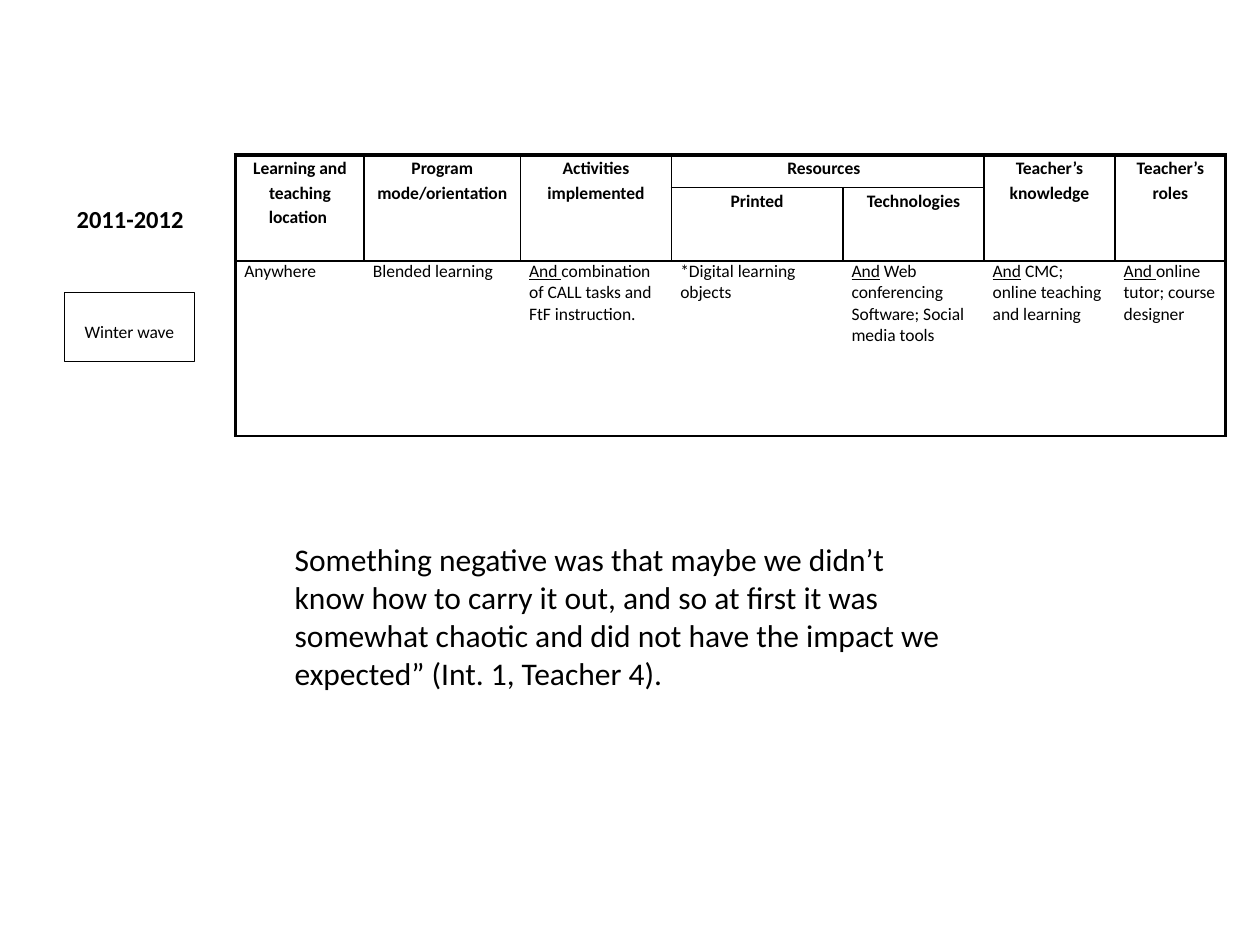
import pptx
import pptx.dml.color
import pptx.enum.shapes
import pptx.enum.text
import pptx.oxml
import pptx.oxml.ns
import pptx.util

BLACK = pptx.dml.color.RGBColor(0, 0, 0)
WHITE = pptx.dml.color.RGBColor(255, 255, 255)
FONT = "Calibri"
CENTER = pptx.enum.text.PP_ALIGN.CENTER
SLIDE_WIDTH, SLIDE_HEIGHT = 10, 7.5
THIN, THICK = 1, 2.25
COLUMNS = [1.02, 1.24, 1.2, 1.36, 1.12, 1.04, 0.88]
ROWS = [0.26, 0.26, 1.39]
HEADINGS = [
    (0, 0, 2, 1, ["Learning and teaching", "location "]),
    (0, 1, 2, 1, ["Program mode/orientation"]),
    (0, 2, 2, 1, ["Activities implemented"]),
    (0, 3, 1, 2, ["Resources  "]),
    (0, 5, 2, 1, ["Teacher’s knowledge"]),
    (0, 6, 2, 1, ["Teacher’s roles"]),
    (1, 3, 1, 1, ["Printed"]),
    (1, 4, 1, 1, ["Technologies"]),
]
PRACTICES = [
    ("", ["Anywhere"]),
    ("", ["Blended learning  "]),
    ("And ", ["combination of CALL tasks and FtF instruction."]),
    ("", ["*Digital learning objects"]),
    ("And", [" Web conferencing", "Software; Social media tools"]),
    ("And", [" CMC;", "online teaching and learning"]),
    ("And ", ["online tutor; course designer"]),
]
QUOTE = ("Something negative was that maybe we didn’t know how to carry it out, "
         "and so at first it was somewhat chaotic and did not have the impact we "
         "expected” (Int. 1, Teacher 4).")


def write(frame, lines, size=10, bold=False, align=None, spacing=None, lead=""):
    """Write lines as paragraphs, with an underlined lead before the first."""
    frame.word_wrap = True
    for index, line in enumerate(lines):
        paragraph = frame.add_paragraph() if index else frame.paragraphs[0]
        paragraph.alignment = align
        paragraph.line_spacing = spacing
        pieces = [(lead, True)] if lead and index == 0 else []
        for words, underline in pieces + [(line, False)]:
            run = paragraph.add_run()
            run.text = words
            run.font.name = FONT
            run.font.size = pptx.util.Pt(size)
            run.font.bold = bold
            run.font.underline = underline
            run.font.color.rgb = BLACK


def set_borders(cell, **widths):
    """Draw the named sides (L, R, T, B) in points and clear the others."""
    properties = cell._tc.get_or_add_tcPr()
    for side in "LRTB":
        width = widths.get(side, 0)
        paint = f'<a:solidFill><a:srgbClr val="{BLACK}"/></a:solidFill>' if width else "<a:noFill/>"
        properties.append(pptx.oxml.parse_xml(
            f'<a:ln{side} {pptx.oxml.ns.nsdecls("a")} w="{int(pptx.util.Pt(width))}">'
            f"{paint}</a:ln{side}>"))


def fill_cell(cell, lines, borders, **text_format):
    """Set a cell's borders, fill, margins and text."""
    set_borders(cell, **borders)
    cell.fill.background()
    cell.margin_left = cell.margin_right = pptx.util.Inches(0.07)
    cell.margin_top = cell.margin_bottom = 0
    write(cell.text_frame, lines, **text_format)


def add_practice_table(slide, box):
    """Place the table of teaching practices, with merged headings."""
    left, top, width, height = box
    table = slide.shapes.add_table(len(ROWS), len(COLUMNS), left, top, width, height).table
    table.first_row = table.horz_banding = False
    for column, share in zip(table.columns, COLUMNS):
        column.width = int(width * share / sum(COLUMNS))
    for row, share in zip(table.rows, ROWS):
        row.height = int(height * share / sum(ROWS))
    last = len(COLUMNS) - 1
    for row, column, down, across, lines in HEADINGS:
        borders = {"L": THICK if column == 0 else THIN,
                   "R": THICK if column == last else THIN,
                   "T": THICK if row == 0 else THIN, "B": THIN}
        for r in range(row, row + down):
            for c in range(column, column + across):
                if (r, c) != (row, column):
                    set_borders(table.cell(r, c), **borders)
                    table.cell(r, c).fill.background()
        cell = table.cell(row, column)
        if down * across > 1:
            cell.merge(table.cell(row + down - 1, column + across - 1))
        fill_cell(cell, lines, borders, bold=True, align=CENTER, spacing=1.15)
    for column, (lead, lines) in enumerate(PRACTICES):
        borders = {"T": THIN, "B": THIN,
                   "L": THICK if column == 0 else 0,
                   "R": THICK if column == last else 0}
        fill_cell(table.cell(2, column), lines, borders, lead=lead)


def add_period(slide, box):
    """Group the school year above the framed name of its wave."""
    left, top, width, height = box
    period = slide.shapes.add_group_shape().shapes
    year = period.add_textbox(left, top, width, int(height * 0.26))
    write(year.text_frame, ["2011-2012"], size=14, bold=True)
    wave = period.add_shape(pptx.enum.shapes.MSO_SHAPE.RECTANGLE, left,
                            top + int(height * 0.58), int(width * 0.94), int(height * 0.42))
    wave.shadow.inherit = False
    wave.fill.solid()
    wave.fill.fore_color.rgb = WHITE
    wave.line.color.rgb = BLACK
    wave.line.width = pptx.util.Pt(0.5)
    wave.text_frame.vertical_anchor = pptx.enum.text.MSO_ANCHOR.TOP
    wave.text_frame.margin_top = pptx.util.Inches(0.22)
    write(wave.text_frame, ["Winter wave"], align=CENTER)


def add_quote(slide, box):
    """Place the teacher's words."""
    write(slide.shapes.add_textbox(*box).text_frame, [QUOTE], size=18)


def main():
    """Build and save the slide."""
    deck = pptx.Presentation()
    deck.slide_width = pptx.util.Inches(SLIDE_WIDTH)
    deck.slide_height = pptx.util.Inches(SLIDE_HEIGHT)
    slide = deck.slides.add_slide(deck.slide_layouts[6])
    regions = [
        (add_practice_table, (1.87, 1.23, sum(COLUMNS), sum(ROWS))),
        (add_period, (0.51, 1.57, 1.1, 1.3)),
        (add_quote, (2.24, 4.24, 5.39, 1.31)),
    ]
    for place, box in regions:
        place(slide, [pptx.util.Inches(length) for length in box])
    deck.save("out.pptx")


if __name__ == "__main__":
    main()
